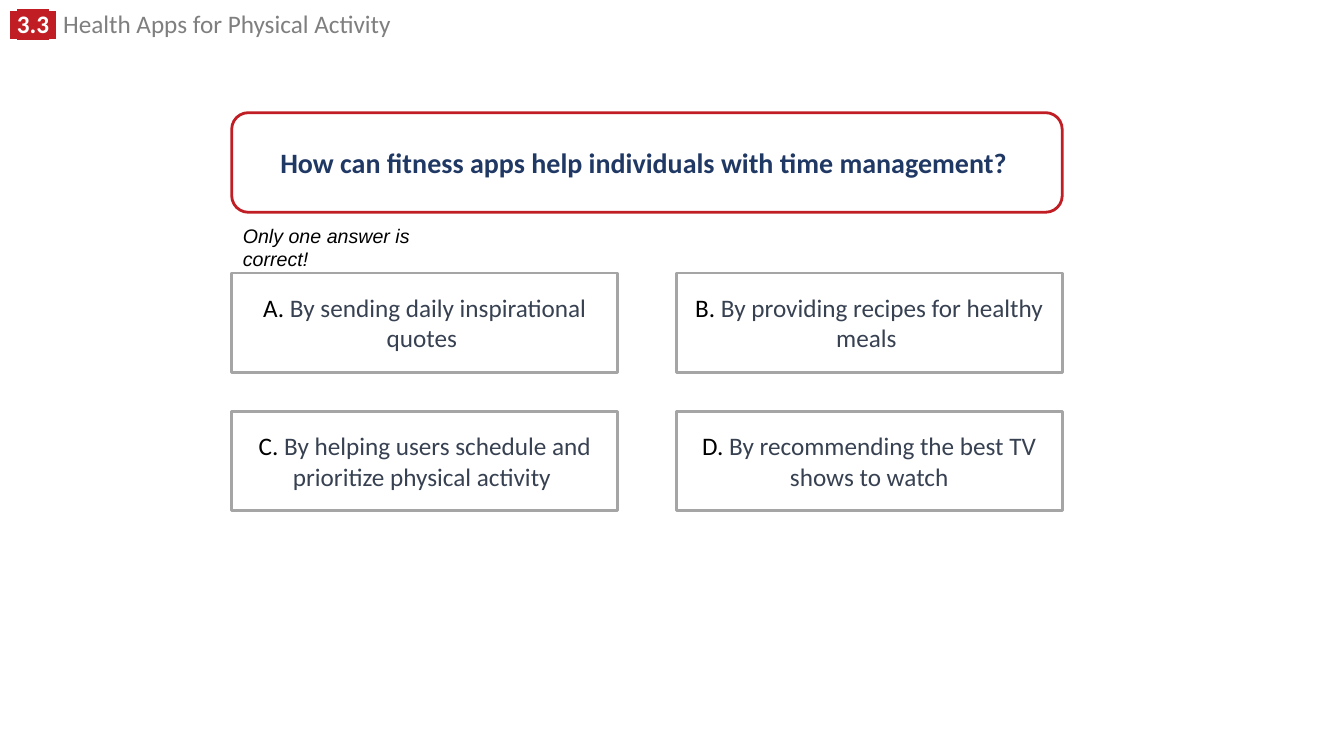
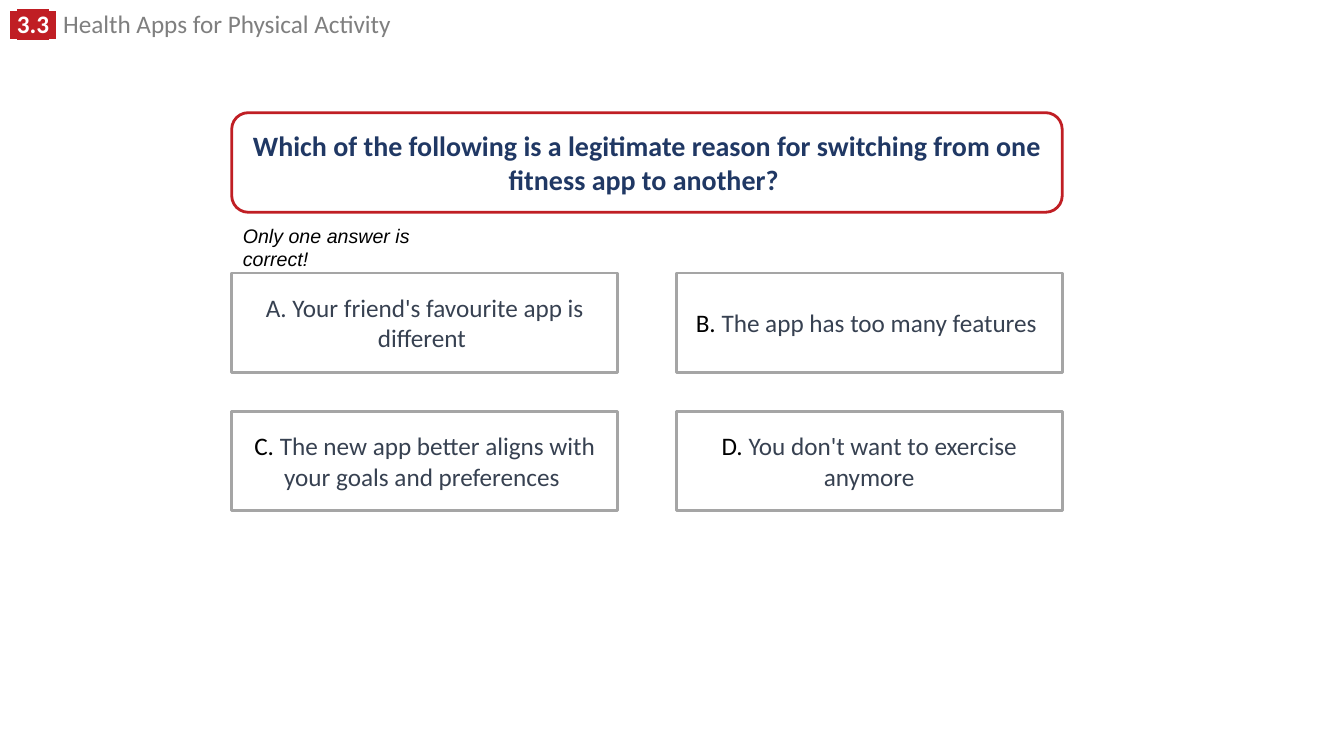
"""Build two multiple-choice quiz slides on health apps."""
from dataclasses import dataclass

from lxml.etree import SubElement
from pptx import Presentation
from pptx.dml.color import RGBColor as RGB
from pptx.enum.shapes import MSO_SHAPE as SHAPE
from pptx.enum.text import MSO_ANCHOR as ANCHOR, PP_ALIGN as ALIGN
from pptx.oxml.ns import qn
from pptx.util import Cm, Pt


@dataclass(frozen=True)
class Theme:
    red: str = "C01E24"
    navy: str = "203864"
    slate: str = "374151"
    grey: str = "7F7F7F"
    border: str = "A5A5A5"
    white: str = "FFFFFF"
    black: str = "000000"
    body_font: str = "Calibri"
    note_font: str = "Arial"
    question_size: int = 20
    body_size: int = 18
    note_size: int = 14
    line_width: int = 2


def add_run(p, text, *, font, size, color, bold=False, italic=False, highlight=None):
    r = p.add_run()
    r.text = text
    f = r.font
    f.size, f.bold, f.italic = Pt(size), bold, italic
    f.color.rgb = RGB.from_string(color)
    if highlight:
        rPr = f._element
        mark = SubElement(rPr, qn("a:highlight"))
        SubElement(mark, qn("a:srgbClr")).set("val", highlight)
    f.name = font


class Quiz:
    LEFT, TOP = 5.84, 6.88
    CARD_W, CARD_H = 9.73, 2.51
    STEP_X, STEP_Y = 11.2, 3.48

    def __init__(self, theme):
        self.theme = theme
        self.prs = Presentation()
        self.prs.slide_width, self.prs.slide_height = Cm(33.87), Cm(19.05)
        self.s = None

    def new_slide(self):
        self.s = self.prs.slides.add_slide(self.prs.slide_layouts[6])

    def text_box(self, x, y, w, h):
        tf = self.s.shapes.add_textbox(Cm(x), Cm(y), Cm(w), Cm(h)).text_frame
        tf.word_wrap = True
        return tf.paragraphs[0]

    def panel(self, shape, x, y, w, h, line):
        sp = self.s.shapes.add_shape(shape, Cm(x), Cm(y), Cm(w), Cm(h))
        sp.shadow.inherit = False
        sp.fill.solid()
        sp.fill.fore_color.rgb = RGB.from_string(self.theme.white)
        sp.line.color.rgb = RGB.from_string(line)
        sp.line.width = Pt(self.theme.line_width)
        tf = sp.text_frame
        tf.word_wrap = True
        tf.vertical_anchor = ANCHOR.MIDDLE
        p = tf.paragraphs[0]
        p.alignment = ALIGN.CENTER
        return p

    def header(self, number, title):
        t = self.theme
        p = self.text_box(0, 0.23, 24.18, 0.89)
        p.line_spacing = 0.8
        tag = dict(size=t.body_size, color=t.white, bold=True, highlight=t.red)
        plain = dict(size=t.body_size, color=t.grey)
        add_run(p, " ", font=t.note_font, **tag)
        add_run(p, number, font=t.body_font, **tag)
        add_run(p, " ", font=t.note_font, **tag)
        add_run(p, " ", font=t.note_font, **plain)
        add_run(p, title, font=t.body_font, **plain)

    def question(self, text):
        t = self.theme
        width = self.STEP_X + self.CARD_W
        p = self.panel(SHAPE.ROUNDED_RECTANGLE, self.LEFT, 2.84, width, self.CARD_H, t.red)
        add_run(p, text, font=t.body_font, size=t.question_size, color=t.navy, bold=True)

    def note(self, text):
        t = self.theme
        p = self.text_box(5.87, 5.51, 5.99, 0.86)
        add_run(p, text, font=t.note_font, size=t.note_size, color=t.black, italic=True)

    def answers(self, texts, label_colors):
        t = self.theme
        style = dict(font=t.body_font, size=t.body_size)
        for i, (letter, text, color) in enumerate(zip("ABCD", texts, label_colors)):
            row, col = divmod(i, 2)
            x, y = self.LEFT + col * self.STEP_X, self.TOP + row * self.STEP_Y
            p = self.panel(SHAPE.RECTANGLE, x, y, self.CARD_W, self.CARD_H, t.border)
            add_run(p, f"{letter}. ", color=color, **style)
            add_run(p, text, color=t.slate, **style)


def main():
    theme = Theme()
    quiz = Quiz(theme)
    slides = [
        (
            "How can fitness apps help individuals with time management? ",
            [
                "By sending daily inspirational quotes ",
                "By providing recipes for healthy meals ",
                "By helping users schedule and prioritize physical activity ",
                "By recommending the best TV shows to watch",
            ],
            [theme.black] * 4,
        ),
        (
            "Which of the following is a legitimate reason for switching "
            "from one fitness app to another? ",
            [
                "Your friend's favourite app is different ",
                "The app has too many features ",
                "The new app better aligns with your goals and preferences ",
                "You don't want to exercise anymore",
            ],
            [theme.slate] + [theme.black] * 3,
        ),
    ]
    for question, answers, label_colors in slides:
        quiz.new_slide()
        quiz.header("3.3", "Health Apps for Physical Activity")
        quiz.question(question)
        quiz.note("Only one answer is correct!")
        quiz.answers(answers, label_colors)
    quiz.prs.save("out.pptx")


if __name__ == "__main__":
    main()
